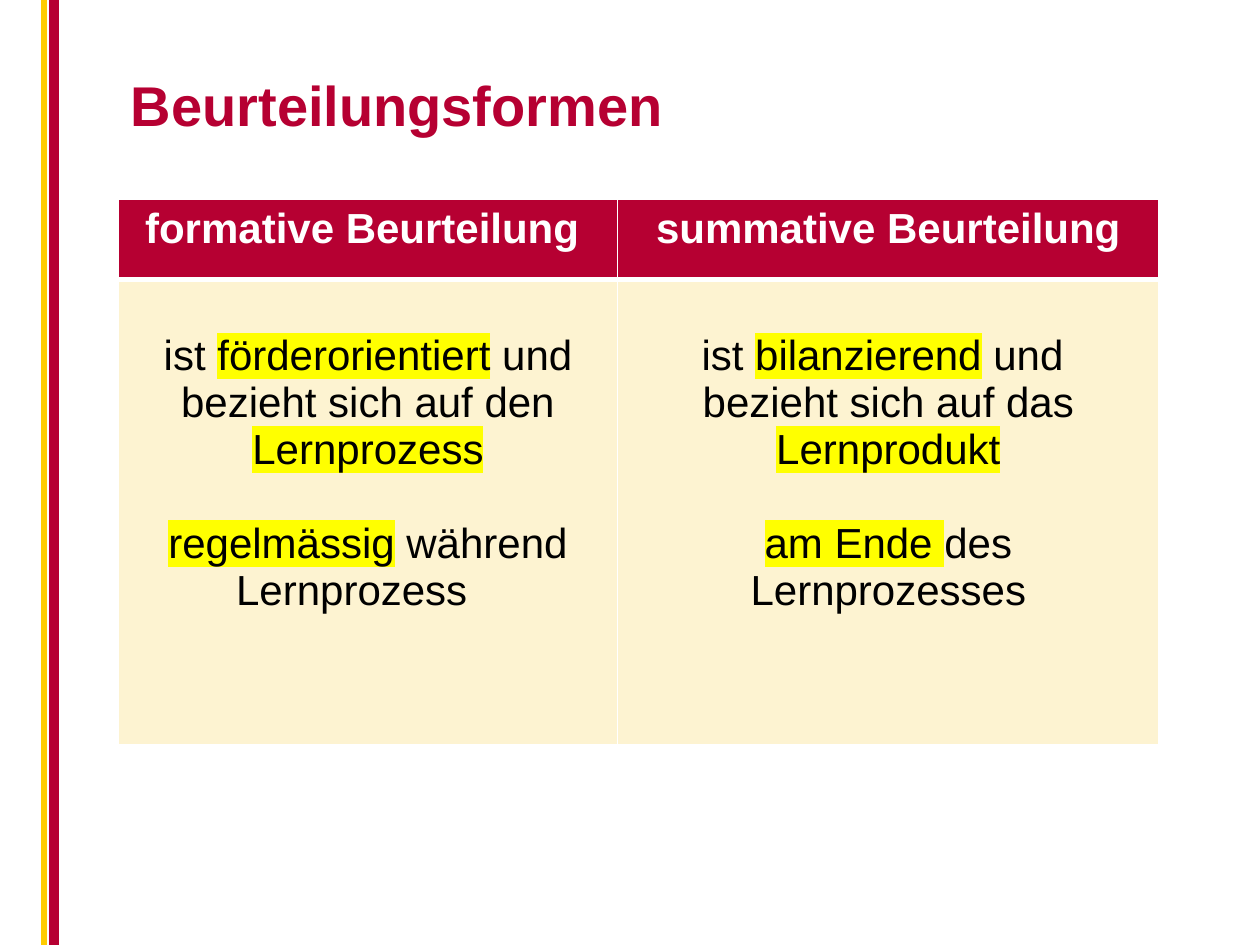
"""Build the slide comparing formative and summative assessment."""
import pptx
import pptx.dml.color
import pptx.enum.shapes
import pptx.enum.text
import pptx.oxml.ns
import pptx.util
from lxml import etree

Inches = pptx.util.Inches
Pt = pptx.util.Pt
RGBColor = pptx.dml.color.RGBColor
qn = pptx.oxml.ns.qn

RED = RGBColor(0xB6, 0x00, 0x32)
GOLD = RGBColor(0xFF, 0xCC, 0x00)
CREAM = RGBColor(0xFD, 0xF3, 0xD1)
YELLOW = RGBColor(0xFF, 0xFF, 0x00)
WHITE = RGBColor(0xFF, 0xFF, 0xFF)
BLACK = RGBColor(0x00, 0x00, 0x00)
FONT = "Arial"

TITLE = "Beurteilungsformen"
STRIPES = [(0.43, RED, 6), (0.35, GOLD, 3)]
COLUMN_WIDTHS = [3.96, 4.3]
ROW_HEIGHTS = [0.64, 3.69]
HEADERS = ["formative Beurteilung ", "summative Beurteilung"]
BODIES = [
    [
        [("ist ", False), ("förderorientiert", True),
         (" und bezieht sich auf den ", False), ("Lernprozess", True)],
        [("regelmässig", True), (" während Lernprozess\t ", False)],
    ],
    [
        [("ist ", False), ("bilanzierend", True),
         (" und \nbezieht sich auf das ", False), ("Lernprodukt", True)],
        [("am Ende ", True), ("des Lernprozesses", False)],
    ],
]


def add_span(para, text, size, color, bold=False, marked=False):
    for number, line in enumerate(text.split("\n")):
        if number:
            para.add_line_break()
        span = para.add_run()
        span.text = line
        span.font.size = Pt(size)
        span.font.bold = bold
        span.font.name = FONT
        span.font.color.rgb = color
        if marked:
            highlight = etree.Element(qn("a:highlight"))
            etree.SubElement(highlight, qn("a:srgbClr"), val=str(YELLOW))
            span.font._element.find(qn("a:solidFill")).addnext(highlight)


def style_cell(cell, fill, top, bottom):
    cell.fill.solid()
    cell.fill.fore_color.rgb = fill
    properties = cell._tc.get_or_add_tcPr()
    widths = {"a:lnL": 1, "a:lnR": 1, "a:lnT": top, "a:lnB": bottom}
    for index, (side, width) in enumerate(widths.items()):
        border = etree.Element(qn(side), w=str(Pt(width)))
        paint = etree.SubElement(border, qn("a:solidFill"))
        etree.SubElement(paint, qn("a:srgbClr"), val=str(WHITE))
        properties.insert(index, border)


def add_stripe(slide, left, color, width):
    stripe = slide.shapes.add_connector(
        pptx.enum.shapes.MSO_CONNECTOR.STRAIGHT,
        Inches(left), 0, Inches(left), Inches(7.5))
    stripe.line.color.rgb = color
    stripe.line.width = Pt(width)
    etree.SubElement(stripe._element.spPr, qn("a:effectLst"))


def add_title(slide):
    box = slide.shapes.add_textbox(
        Inches(0.94), Inches(0.36), Inches(8.67), Inches(0.94))
    box.text_frame.word_wrap = True
    box.text_frame.vertical_anchor = pptx.enum.text.MSO_ANCHOR.MIDDLE
    add_span(box.text_frame.paragraphs[0], TITLE, 32, RED, bold=True)


def add_comparison(slide):
    table = slide.shapes.add_table(
        2, 2, Inches(0.94), Inches(1.58),
        Inches(sum(COLUMN_WIDTHS)), Inches(sum(ROW_HEIGHTS))).table
    for row, height in zip(table.rows, ROW_HEIGHTS):
        row.height = Inches(height)
    for index, (width, header, body) in enumerate(
            zip(COLUMN_WIDTHS, HEADERS, BODIES)):
        table.columns[index].width = Inches(width)
        head_cell, body_cell = table.cell(0, index), table.cell(1, index)
        style_cell(head_cell, RED, 1, 3)
        style_cell(body_cell, CREAM, 3, 1)
        para = head_cell.text_frame.paragraphs[0]
        para.alignment = pptx.enum.text.PP_ALIGN.CENTER
        add_span(para, header, 24, WHITE, bold=True)
        body_cell.margin_top = Inches(0.42)
        frame = body_cell.text_frame
        for number, spans in enumerate(body):
            para = frame.add_paragraph() if number else frame.paragraphs[0]
            para.alignment = pptx.enum.text.PP_ALIGN.CENTER
            if number:
                para.space_before = Pt(27)
            for text, marked in spans:
                add_span(para, text, 24, BLACK, marked=marked)


def main():
    deck = pptx.Presentation()
    deck.slide_width, deck.slide_height = Inches(10), Inches(7.5)
    slide = deck.slides.add_slide(deck.slide_layouts[6])
    for stripe in STRIPES:
        add_stripe(slide, *stripe)
    add_title(slide)
    add_comparison(slide)
    deck.save("out.pptx")


if __name__ == "__main__":
    main()
